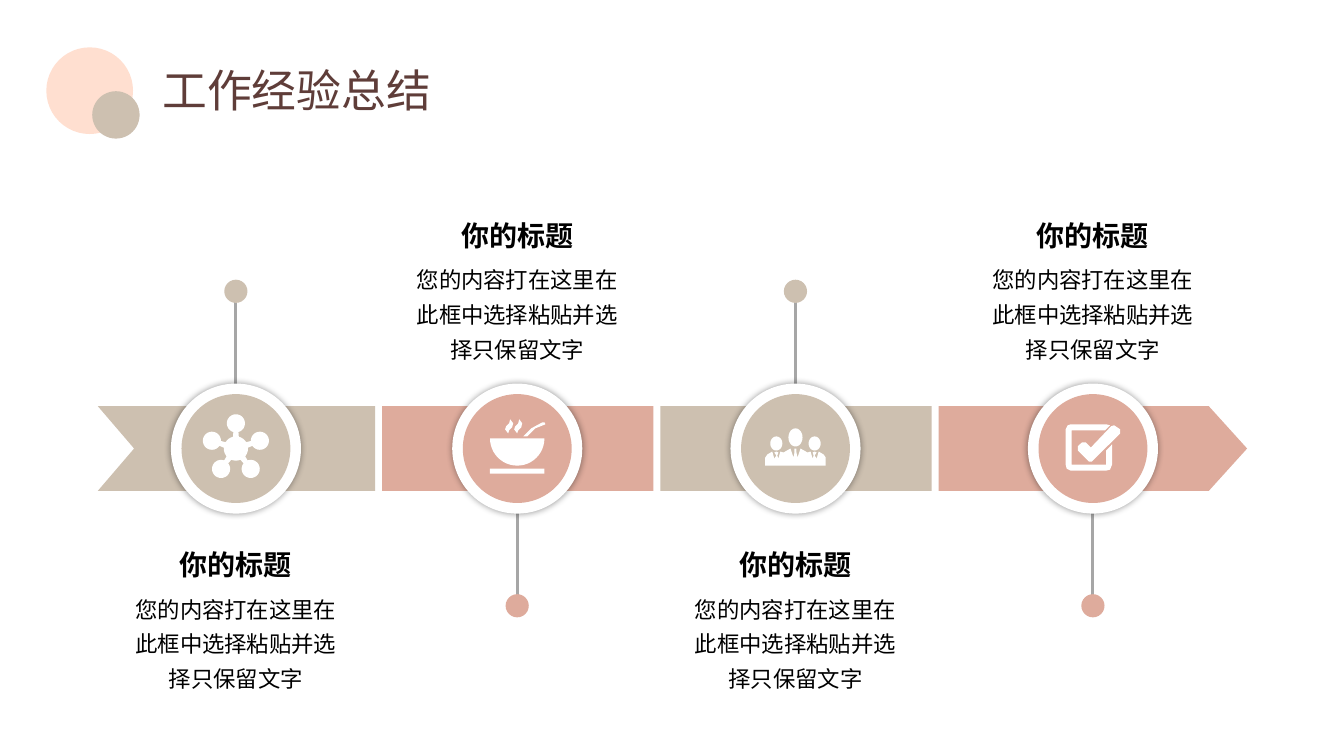
from math import cos, radians, sin

from lxml.etree import SubElement
from pptx import Presentation
from pptx.dml.color import RGBColor
from pptx.enum.shapes import MSO_CONNECTOR, MSO_SHAPE
from pptx.enum.text import MSO_ANCHOR, PP_ALIGN
from pptx.oxml.ns import qn
from pptx.util import Inches, Pt

FONT = "Noto Sans CJK SC"
SAND, ROSE, PEACH = "CDC0B0", "DEAB9C", "FFDFD0"
WHITE, BLACK, GREY, BROWN = "FFFFFF", "000000", "A6A6A6", "5F3D39"
MID_Y = 4.45
BAND_TOP, BAND_BOTTOM = 4.03, 4.87
HEADING = "你的标题"
BODY = "您的内容打在这里在此框中选择粘贴并选择只保留文字"


def rgb(color):
    return RGBColor.from_string(color)


def paint(sp, color):
    sp.shadow.inherit = False
    sp.fill.solid()
    sp.fill.fore_color.rgb = rgb(color)
    sp.line.fill.background()
    return sp


def add_circle(slide, cx, cy, diameter, color):
    left, top = cx - diameter / 2, cy - diameter / 2
    sp = slide.shapes.add_shape(MSO_SHAPE.OVAL, Inches(left), Inches(top),
                                Inches(diameter), Inches(diameter))
    return paint(sp, color)


def add_glow_shadow(sp):
    effects = sp._element.spPr.find(qn("a:effectLst"))
    shadow = SubElement(effects, qn("a:outerShdw"), blurRad=str(Pt(5)), dist="0", dir="0")
    color = SubElement(shadow, qn("a:srgbClr"), val=BLACK)
    SubElement(color, qn("a:alpha"), val="40000")


def add_outline(slide, contours, color, cx=0, cy=0):
    points = [[(Inches(cx + x), Inches(cy + y)) for x, y in c] for c in contours]
    builder = slide.shapes.build_freeform(*points[0][0])
    builder.add_line_segments(points[0][1:], close=True)
    for contour in points[1:]:
        builder.move_to(*contour[0])
        builder.add_line_segments(contour[1:], close=True)
    return paint(builder.convert_to_shape(), color)


def add_stem(slide, x, y1, y2):
    line = slide.shapes.add_connector(MSO_CONNECTOR.STRAIGHT, Inches(x), Inches(y1),
                                      Inches(x), Inches(y2))
    line.line.color.rgb = rgb(GREY)
    line.line.width = Pt(2.25)
    SubElement(line._element.spPr, qn("a:effectLst"))


def style(p, size, color, spacing, bold=False):
    p.line_spacing = spacing
    p.font.name = FONT
    p.font.size = Pt(size)
    p.font.bold = bold
    p.font.color.rgb = rgb(color)
    latin = p._p.pPr.find(qn("a:defRPr")).find(qn("a:latin"))
    east_asian = latin.makeelement(qn("a:ea"), {"typeface": FONT})
    latin.addnext(east_asian)


def add_text(slide, text, cx, top, width, height, size, spacing, bold=False):
    box = slide.shapes.add_textbox(Inches(cx - width / 2), Inches(top),
                                   Inches(width), Inches(height))
    tf = box.text_frame
    tf.word_wrap = True
    p = tf.paragraphs[0]
    p.text = text
    p.alignment = PP_ALIGN.CENTER
    style(p, size, BLACK, spacing, bold)


def add_title(slide, text):
    title = slide.shapes.title
    title.left, title.top = Inches(1.51), Inches(0.54)
    title.width, title.height = Inches(11.5), Inches(0.76)
    tf = title.text_frame
    tf.vertical_anchor = MSO_ANCHOR.MIDDLE
    p = tf.paragraphs[0]
    p.text = text
    p.alignment = PP_ALIGN.LEFT
    style(p, 32, BROWN, 0.9)


def arc(cx, cy, rx, ry, start=0, end=360, steps=24):
    angles = [radians(start + (end - start) * i / steps) for i in range(steps + 1)]
    return [(cx + rx * sin(a), cy - ry * cos(a)) for a in angles]


def network_icon():
    outline = []
    for angle in range(0, 360, 72):
        x, y = 0.25 * sin(radians(angle)), -0.25 * cos(radians(angle))
        outline += arc(x, y, 0.09, 0.09, angle + 196, angle + 524)
        outline += arc(0, 0, 0.12, 0.12, angle + 14, angle + 58, 6)
    return [outline]


def bowl_icon():
    base = [(-0.27, 0.2), (0.27, 0.2), (0.27, 0.25), (-0.27, 0.25)]
    bowl = arc(0, -0.1, 0.27, 0.27, 90, 270)
    spoon = [(0.27, -0.26), (0.28, -0.24), (0.18, -0.2), (0.1, -0.12),
             (0.06, -0.12), (0.14, -0.2), (0.25, -0.26)]
    steam = [(0.02, -0.29), (0.05, -0.25), (0.04, -0.21), (0.01, -0.18),
             (0, -0.15), (-0.03, -0.19), (-0.02, -0.22), (0.01, -0.25)]
    return [base, bowl, spoon] + [[(x + dx, y) for x, y in steam] for dx in (0, -0.09)]


def team_icon():
    half = [(0.01, 0), (0.01, 0.04), (0.02, 0.09), (0.05, 0), (0.12, 0.04),
            (0.15, 0.03), (0.17, 0.1), (0.18, 0.07), (0.17, 0.04), (0.19, 0.03),
            (0.21, 0.04), (0.19, 0.07), (0.21, 0.1), (0.23, 0.03), (0.28, 0.06),
            (0.3, 0.09), (0.3, 0.17)]
    bodies = half + [(-x, y) for x, y in reversed(half)]
    side_heads = [arc(x, -0.05, 0.06, 0.07) for x in (-0.19, 0.19)]
    return [bodies, arc(0, -0.11, 0.07, 0.09)] + side_heads


def checkbox_icon():
    tick = [(0.21, -0.23), (0.27, -0.19), (0.27, -0.15), (-0.01, 0.13), (-0.04, 0.13),
            (-0.15, 0.02), (-0.15, -0.02), (-0.11, -0.06), (-0.07, -0.06),
            (-0.02, -0.01), (0.18, -0.22)]
    box = [(-0.22, -0.24), (0.13, -0.24), (0.17, -0.23), (0.12, -0.18), (-0.21, -0.18),
           (-0.21, 0.16), (0.13, 0.16), (0.13, 0.02), (0.19, -0.04), (0.19, 0.16),
           (0.17, 0.21), (0.13, 0.22), (-0.22, 0.22), (-0.26, 0.2), (-0.27, 0.16),
           (-0.27, -0.19), (-0.25, -0.23)]
    return [tick, box]


def add_band(slide, left, right, color, notch=0, tip=0):
    if notch or tip:
        outline = [(left, BAND_TOP), (right - tip, BAND_TOP), (right, MID_Y),
                   (right - tip, BAND_BOTTOM), (left, BAND_BOTTOM), (left + notch, MID_Y)]
        add_outline(slide, [outline], color)
    else:
        sp = slide.shapes.add_shape(MSO_SHAPE.RECTANGLE, Inches(left), Inches(BAND_TOP),
                                    Inches(right - left), Inches(BAND_BOTTOM - BAND_TOP))
        paint(sp, color)


def add_stage(slide, cx, color, icon, stem_side, text_top):
    add_stem(slide, cx, MID_Y + 1.45 * stem_side, MID_Y + 0.54 * stem_side)
    add_glow_shadow(add_circle(slide, cx, MID_Y, 1.29, WHITE))
    add_circle(slide, cx, MID_Y, 1.08, color)
    add_circle(slide, cx, MID_Y + 1.56 * stem_side, 0.23, color)
    add_outline(slide, icon, WHITE, cx, MID_Y)
    add_text(slide, HEADING, cx, text_top, 1.83, 0.56, 20, 1.5, bold=True)
    add_text(slide, BODY, cx, text_top + 0.56, 2.22, 1.12, 16, 1.3)


def main():
    prs = Presentation()
    prs.slide_width, prs.slide_height = Inches(13.33), Inches(7.5)
    slide = prs.slides.add_slide(prs.slide_layouts[5])
    add_circle(slide, 0.89, 0.9, 0.86, PEACH)
    add_circle(slide, 1.15, 1.14, 0.47, SAND)
    add_title(slide, "工作经验总结")

    add_band(slide, 0.97, 3.72, SAND, notch=0.36)
    add_band(slide, 3.79, 6.48, ROSE)
    add_band(slide, 6.55, 9.24, SAND)
    add_band(slide, 9.31, 12.37, ROSE, tip=0.38)

    centers = (2.34, 5.13, 7.89, 10.84)
    icons = (network_icon(), bowl_icon(), team_icon(), checkbox_icon())
    for i, (cx, icon) in enumerate(zip(centers, icons)):
        if i % 2:
            add_stage(slide, cx, ROSE, icon, 1, 1.95)
        else:
            add_stage(slide, cx, SAND, icon, -1, 5.22)
    prs.save("out.pptx")


if __name__ == "__main__":
    main()
